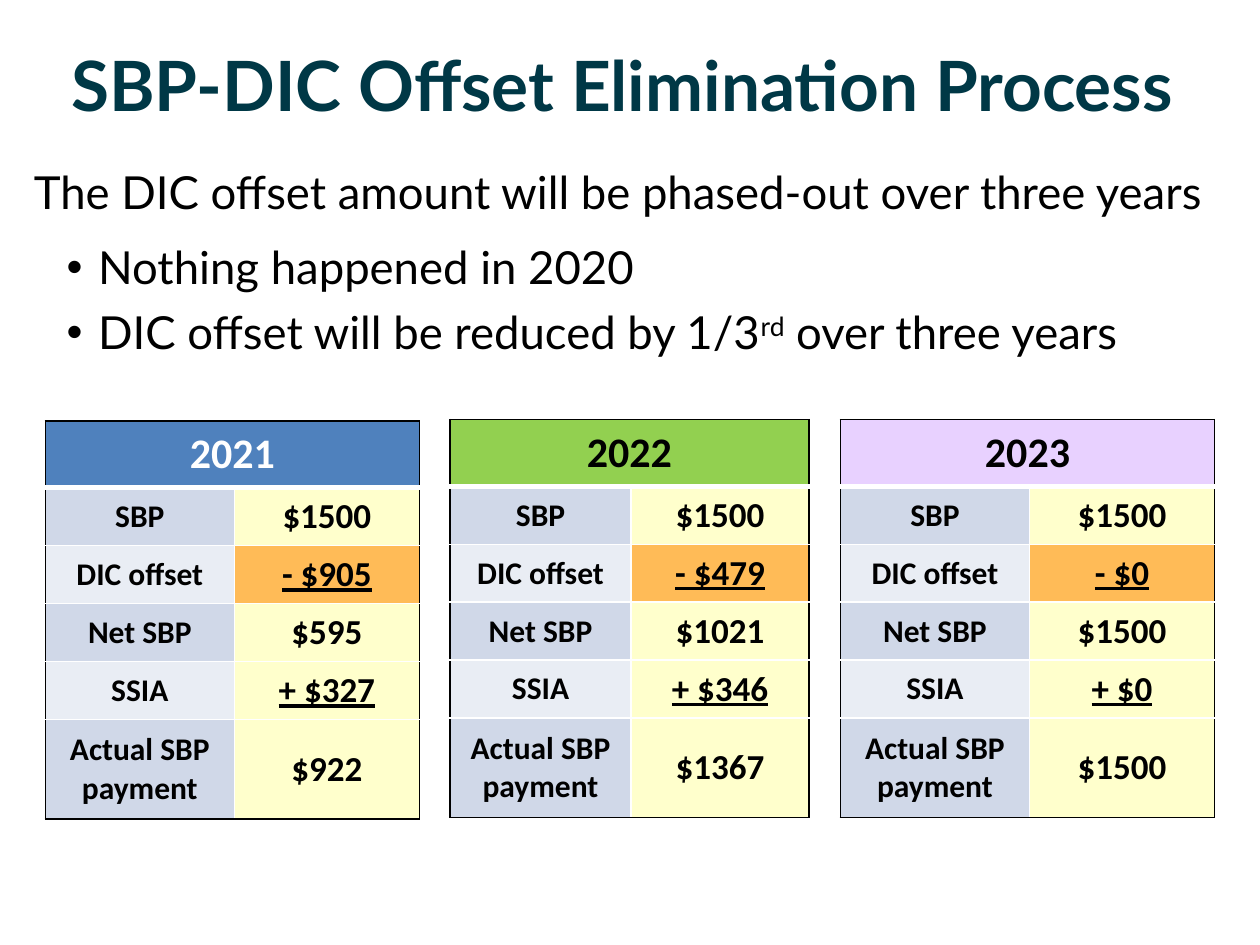
from dataclasses import dataclass

from lxml.etree import SubElement
from pptx import Presentation
from pptx.dml.color import RGBColor
from pptx.enum.text import MSO_ANCHOR as Anchor, PP_ALIGN as Align
from pptx.oxml.ns import qn
from pptx.util import Inches, Pt


@dataclass(frozen=True)
class Theme:
    text_font: str = "Lato"
    table_font: str = "Calibri"
    title_size: float = 39.6
    body_size: float = 26
    year_size: float = 24
    label_size: float = 18
    amount_size: float = 20
    title: str = "003846"
    black: str = "000000"
    white: str = "FFFFFF"
    bands: tuple = ("D0D8E8", "E9EDF4")
    amount: str = "FFFFCC"
    offset: str = "FFBB57"


THEME = Theme()
ROW_HEIGHTS = [0.53, 0.46, 0.46, 0.46, 0.46, 0.79]
LABELS = ["SBP", "DIC offset", "Net SBP", "SSIA", "Actual SBP payment"]
UNDERLINED = {"DIC offset", "SSIA"}

# year, header fill, header text, left, top, column widths, amounts
YEARS = [
    ("2021", "4F81BD", THEME.white, 0.36, 3.34, (1.5, 1.47),
     ["$1500", "- $905", "$595", "+ $327", "$922"]),
    ("2022", "92D050", THEME.black, 3.57, 3.33, (1.44, 1.41),
     ["$1500", "- $479", "$1021", "+ $346", "$1367"]),
    ("2023", "E8D1FF", THEME.black, 6.67, 3.33, (1.5, 1.47),
     ["$1500", "- $0", "$1500", "+ $0", "$1500"]),
]


def add_run(paragraph, text, font, size, color, bold=False, underline=None):
    run = paragraph.add_run()
    run.text = text
    run.font.name = font
    run.font.size = Pt(size)
    run.font.color.rgb = RGBColor.from_string(color)
    run.font.bold = bold
    run.font.underline = underline
    return run


def add_title(slide, text):
    frame = slide.shapes.add_textbox(
        Inches(0.17), Inches(0.08), Inches(9.67), Inches(1.17)).text_frame
    frame.word_wrap = True
    frame.vertical_anchor = Anchor.MIDDLE
    heading = frame.paragraphs[0]
    heading.alignment = Align.CENTER
    add_run(heading, text, THEME.text_font, THEME.title_size, THEME.title, bold=True)


def add_bullet(paragraph):
    props = paragraph._p.get_or_add_pPr()
    props.set("marL", str(Inches(0.51)))
    props.set("indent", str(Inches(-0.25)))
    SubElement(props, qn("a:buFont"), typeface="Arial")
    SubElement(props, qn("a:buChar"), char="•")


def add_explanation(slide):
    frame = slide.shapes.add_textbox(
        Inches(0.17), Inches(1.25), Inches(9.63), Inches(1.67)).text_frame
    frame.word_wrap = False
    # Each line: bulleted, space after, runs of (text, superscript)
    lines = [
        (False, 12, [("The DIC offset amount will be phased-out over three years", False)]),
        (True, 6, [("Nothing happened in 2020", False)]),
        (True, 6, [("DIC offset will be reduced by 1/3", False), ("rd", True),
                   (" over three years", False)]),
    ]
    for index, (bulleted, space_after, parts) in enumerate(lines):
        line = frame.add_paragraph() if index else frame.paragraphs[0]
        if bulleted:
            add_bullet(line)
        line.space_after = Pt(space_after)
        for text, superscript in parts:
            run = add_run(line, text, THEME.text_font, THEME.body_size, THEME.black)
            if superscript:
                run.font._element.set("baseline", "30000")


def set_borders(cell, left, right, top, bottom):
    props = cell._tc.get_or_add_tcPr()
    for side, (color, width) in zip("LRTB", (left, right, top, bottom)):
        border = SubElement(props, qn(f"a:ln{side}"), w=str(Pt(width)))
        fill = SubElement(border, qn("a:solidFill"))
        SubElement(fill, qn("a:srgbClr"), val=color)


def fill_cell(cell, text, size, fill, color=THEME.black, underline=None):
    cell.fill.solid()
    cell.fill.fore_color.rgb = RGBColor.from_string(fill)
    cell.vertical_anchor = Anchor.MIDDLE
    content = cell.text_frame.paragraphs[0]
    content.alignment = Align.CENTER
    add_run(content, text, THEME.table_font, size, color, True, underline)


def add_year_table(slide, year, header_fill, header_color, left, top, widths, amounts):
    table = slide.shapes.add_table(
        len(ROW_HEIGHTS), 2, Inches(left), Inches(top),
        Inches(sum(widths)), Inches(sum(ROW_HEIGHTS))).table
    for column, width in zip(table.columns, widths):
        column.width = Inches(width)
    for row, height in zip(table.rows, ROW_HEIGHTS):
        row.height = Inches(height)

    outline, divider = (THEME.black, 1), (THEME.white, 1)

    # Year header across both columns
    header = table.cell(0, 0)
    header.merge(table.cell(0, 1))
    for column in range(2):
        set_borders(table.cell(0, column), outline, outline, outline, (THEME.white, 3))
    fill_cell(header, year, THEME.year_size, header_fill, header_color)

    # Labels and amounts
    for row, (label, amount) in enumerate(zip(LABELS, amounts), start=1):
        label_cell, amount_cell = table.cell(row, 0), table.cell(row, 1)
        bottom = outline if row == len(LABELS) else divider
        set_borders(label_cell, outline, divider, divider, bottom)
        set_borders(amount_cell, divider, outline, divider, bottom)
        fill_cell(label_cell, label, THEME.label_size, THEME.bands[(row - 1) % 2])
        fill_cell(amount_cell, amount, THEME.amount_size,
                  THEME.offset if label == "DIC offset" else THEME.amount,
                  underline=True if label in UNDERLINED else None)


def main():
    deck = Presentation()
    deck.slide_width, deck.slide_height = Inches(10), Inches(7.5)
    slide = deck.slides.add_slide(deck.slide_layouts[6])
    add_title(slide, "SBP-DIC Offset Elimination Process ")
    add_explanation(slide)
    for year in YEARS:
        add_year_table(slide, *year)
    deck.save("out.pptx")


if __name__ == "__main__":
    main()
